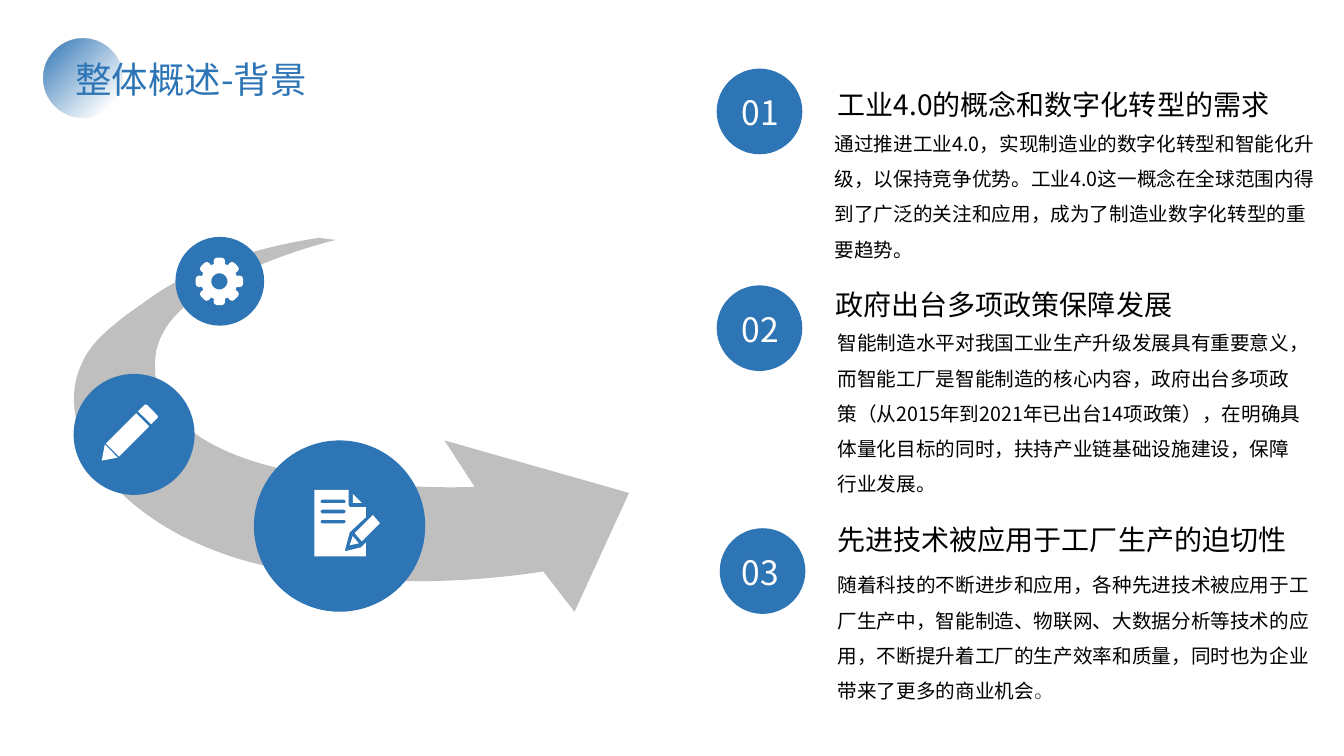
from dataclasses import dataclass
from math import cos, radians, sin

from lxml.etree import SubElement
from pptx import Presentation
from pptx.dml.color import RGBColor
from pptx.enum.shapes import MSO_SHAPE as Preset
from pptx.enum.text import MSO_ANCHOR as Anchor, MSO_AUTO_SIZE as AutoSize, PP_ALIGN as Align
from pptx.oxml import parse_xml
from pptx.oxml.ns import nsdecls, qn
from pptx.util import Pt

Point = tuple[float, float]
Step = tuple[Point, ...]  # one point: straight line; three points: Bézier curve
Contour = list[Step]


@dataclass(frozen=True)
class Theme:
    font: str = "Noto Sans CJK SC"
    blue: str = "2E75B6"
    grey: str = "BFBFBF"
    muted: str = "595959"
    black: str = "000000"
    white: str = "FFFFFF"
    title: int = 26
    number: int = 24
    heading: int = 20
    body: int = 14


@dataclass(frozen=True)
class Box:
    left: float
    top: float
    width: float
    height: float


@dataclass(frozen=True)
class Topic:
    number: str
    heading: str
    body: str
    circle: Box
    number_box: Box
    heading_box: Box
    body_box: Box
    muted_ending: str = ""


THEME = Theme()

TOPICS = [
    Topic("01", "工业4.0的概念和数字化转型的需求",
          "通过推进工业4.0，实现制造业的数字化转型和智能化升级，以保持竞争优势。"
          "工业4.0这一概念在全球范围内得到了广泛的关注和应用，成为了制造业数字化转型的重要趋势。",
          Box(511.9, 49, 61.2, 61.2), Box(524.2, 64.1, 37.4, 31.7),
          Box(598.3, 62.6, 320.4, 24.5), Box(596.2, 85.7, 347, 101.5)),
    Topic("02", "政府出台多项政策保障发展",
          "智能制造水平对我国工业生产升级发展具有重要意义，而智能工厂是智能制造的核心内容，"
          "政府出台多项政策（从2015年到2021年已出台14项政策），在明确具体量化目标的同时，"
          "扶持产业链基础设施建设，保障行业发展。",
          Box(511.9, 203.8, 61.2, 61.2), Box(524.2, 218.9, 37.4, 31.7),
          Box(596.9, 205.2, 340, 24.5), Box(598.3, 228.2, 331.9, 127.4)),
    Topic("03", "先进技术被应用于工厂生产的迫切性",
          "随着科技的不断进步和应用，各种先进技术被应用于工厂生产中，智能制造、物联网、"
          "大数据分析等技术的应用，不断提升着工厂的生产效率和质量，同时也为企业带来了更多的商业机会",
          Box(514.1, 377.3, 61.2, 61.2), Box(524.2, 393.1, 37.4, 31.7),
          Box(598.3, 373, 331.2, 24.5), Box(598.3, 401, 347, 101.5), "。"),
]

MILESTONES = [Box(125.3, 169.2, 63.4, 63.4), Box(52.6, 267.1, 86.4, 86.4),
              Box(181.4, 314.6, 122.4, 122.4)]

ARROW: Contour = [
    ((227.5, 169.9),), ((239.8, 171.4),),
    ((211, 178.6), (185, 188.6), (160.6, 200.9)),
    ((139.7, 211.7), (117.4, 225.4), (111.6, 250.6)),
    ((102.2, 298.8), (155.5, 326.2), (207.4, 336.2)),
    ((228.2, 339.8), (249.8, 343.4), (272.2, 345.6)),
    ((293.8, 347.8), (316.1, 348.5), (339.1, 347.8)),
    ((317.5, 314.6),), ((449.3, 352.1),), ((410.4, 437),), ((388.1, 408.2),),
    ((340.6, 415.4), (294.5, 416.9), (249.8, 413.3)),
    ((208.1, 409.7), (166.3, 401.8), (128.9, 382.3)),
    ((105.8, 370.1), (84.2, 353.5), (69.1, 331.9)),
    ((54.7, 311), (46.8, 284.4), (58.3, 259.9)),
    ((64.8, 244.8), (77.8, 234.7), (90.7, 224.6)),
    ((102.2, 216.7), (113, 208.1), (125.3, 201.6)),
    ((141.1, 193), (158.4, 186.5), (175.7, 181.4)),
    ((192.2, 176.4), (209.5, 172.8), (227.5, 169.9)),
]


def polygon(*points: Point) -> Contour:
    return [(point,) for point in points]


def polar(center: Point, radius: float, degrees: float) -> Point:
    angle = radians(degrees)
    return center[0] + radius * cos(angle), center[1] + radius * sin(angle)


def gear(center: Point) -> list[Contour]:
    tooth = [(-17, 13), (-16, 15), (-12, 16.6), (-6, 17), (6, 17), (12, 16.6), (16, 15), (17, 13)]
    rim = [polar(center, radius, 45 * index + turn) for index in range(8) for turn, radius in tooth]
    hole = [polar(center, 5.8, turn) for turn in range(0, 360, 10)]
    return [polygon(*rim), polygon(*hole)]


def text_line(top: float) -> Contour:
    left, right, bottom = 230.4, 245.5, top + 2.6
    return [((left, top),), ((right, top),),
            ((right + 1.8, top), (right + 1.8, bottom), (right, bottom)), ((left, bottom),),
            ((left - 1.8, bottom), (left - 1.8, top), (left, top))]


PENCIL = [
    polygon((72.7, 329), (84.2, 326.9), (74.9, 317.5)),
    polygon((75.6, 316.8), (85, 326.2), (106.6, 304.6), (97.2, 295.2)),
    [*polygon((108, 303.1), (98.6, 293.8), (103, 289.4)),
     ((103.7, 288.7), (104.8, 289), (105.5, 289.6)), ((112.3, 296.6),),
     ((112.9, 297.2), (113, 298.1), (112.3, 298.8))],
]

DOCUMENT = [
    [*polygon((224.6, 349.9), (249.1, 349.9), (249.1, 360.7)),
     ((249.1, 361.5), (249.8, 362.2), (250.6, 362.2)),
     *polygon((261.4, 362.2), (261.4, 369.4), (249.8, 380.2), (246.2, 393.8), (257.8, 391),
              (261.4, 387.4), (261.4, 397.4), (224.6, 397.4))],
    polygon((252, 352.8), (258.5, 359.3), (252, 359.3)),
    polygon((252, 383), (256.3, 388.1), (249.8, 389.5)),
    polygon((266.4, 367.9), (271.4, 373.7), (258.5, 386.6), (253.4, 380.9)),
    *[text_line(356.9 + 7.2 * row) for row in range(3)],
]


def flatten(contour: Contour, pieces: int = 16) -> list[tuple[int, int]]:
    points = [contour[0][0]]
    for step in contour[1:]:
        if len(step) == 1:
            points.append(step[0])
            continue
        controls = (points[-1], *step)
        for piece in range(1, pieces + 1):
            t = piece / pieces
            weights = ((1 - t) ** 3, 3 * t * (1 - t) ** 2, 3 * t * t * (1 - t), t ** 3)
            points.append(tuple(sum(w * p[axis] for w, p in zip(weights, controls))
                                for axis in (0, 1)))
    return [(Pt(x), Pt(y)) for x, y in points]


def paint(shape, color: str) -> None:
    shape.shadow.inherit = False
    shape.fill.solid()
    shape.fill.fore_color.rgb = RGBColor.from_string(color)
    shape.line.fill.background()


def draw_outline(slide, contours: list[Contour], color: str) -> None:
    first, *others = [flatten(contour) for contour in contours]
    builder = slide.shapes.build_freeform(*first[0])
    builder.add_line_segments(first[1:], close=True)
    for points in others:
        builder.move_to(*points[0])
        builder.add_line_segments(points[1:], close=True)
    paint(builder.convert_to_shape(), color)


def draw_circle(slide, box: Box, color: str):
    shape = slide.shapes.add_shape(Preset.OVAL, Pt(box.left), Pt(box.top), Pt(box.width), Pt(box.height))
    paint(shape, color)
    return shape


def fade(shape, color: str) -> None:
    gradient = parse_xml(
        f'<a:gradFill {nsdecls("a")} rotWithShape="1"><a:gsLst>'
        f'<a:gs pos="15000"><a:srgbClr val="{color}"><a:alpha val="0"/></a:srgbClr></a:gs>'
        f'<a:gs pos="100000"><a:srgbClr val="{color}"/></a:gs></a:gsLst>'
        '<a:path path="circle"><a:fillToRect l="100000" t="100000"/></a:path></a:gradFill>')
    properties = shape.element.spPr
    properties.replace(properties.find(qn("a:solidFill")), gradient)


def style(run, size: int, color: str) -> None:
    run.font.size = Pt(size)
    run.font.name = THEME.font
    run.font.color.rgb = RGBColor.from_string(color)
    SubElement(run.font._element, qn("a:ea")).set("typeface", THEME.font)


def draw_text(slide, box: Box, text: str, size: int, color: str, inset: bool = False, grow: bool = True):
    shape = slide.shapes.add_textbox(Pt(box.left), Pt(box.top), Pt(box.width), Pt(box.height))
    frame = shape.text_frame
    frame.word_wrap = True
    frame.auto_size = AutoSize.SHAPE_TO_FIT_TEXT if grow else AutoSize.NONE
    if not inset:
        frame.margin_left = frame.margin_right = frame.margin_top = frame.margin_bottom = 0
    frame.text = text
    style(frame.paragraphs[0].runs[0], size, color)
    return frame


def draw_topic(slide, topic: Topic) -> None:
    draw_circle(slide, topic.circle, THEME.blue)
    number = draw_text(slide, topic.number_box, topic.number, THEME.number, THEME.white, grow=False)
    number.vertical_anchor = Anchor.MIDDLE
    number.paragraphs[0].alignment = Align.CENTER
    draw_text(slide, topic.heading_box, topic.heading, THEME.heading, THEME.black)
    paragraph = draw_text(slide, topic.body_box, topic.body, THEME.body, THEME.black).paragraphs[0]
    paragraph.line_spacing = 1.5
    if topic.muted_ending:
        ending = paragraph.add_run()
        ending.text = topic.muted_ending
        style(ending, THEME.body, THEME.muted)


def main() -> None:
    presentation = Presentation()
    presentation.slide_width, presentation.slide_height = Pt(960), Pt(540)
    slide = presentation.slides.add_slide(presentation.slide_layouts[6])

    # Curved arrow with its milestones and icons
    draw_outline(slide, [ARROW], THEME.grey)
    for milestone in MILESTONES:
        draw_circle(slide, milestone, THEME.blue)
    for icon in (PENCIL, DOCUMENT, gear((156.7, 201))):
        draw_outline(slide, icon, THEME.white)

    # Numbered topics
    for topic in TOPICS:
        draw_topic(slide, topic)

    # Title over a fading circle
    fade(draw_circle(slide, Box(31, 27.4, 56.2, 56.2), THEME.blue), THEME.blue)
    draw_text(slide, Box(46.8, 37.4, 187.9, 38.9), "整体概述-背景", THEME.title, THEME.blue, inset=True)

    presentation.save("out.pptx")


if __name__ == "__main__":
    main()
